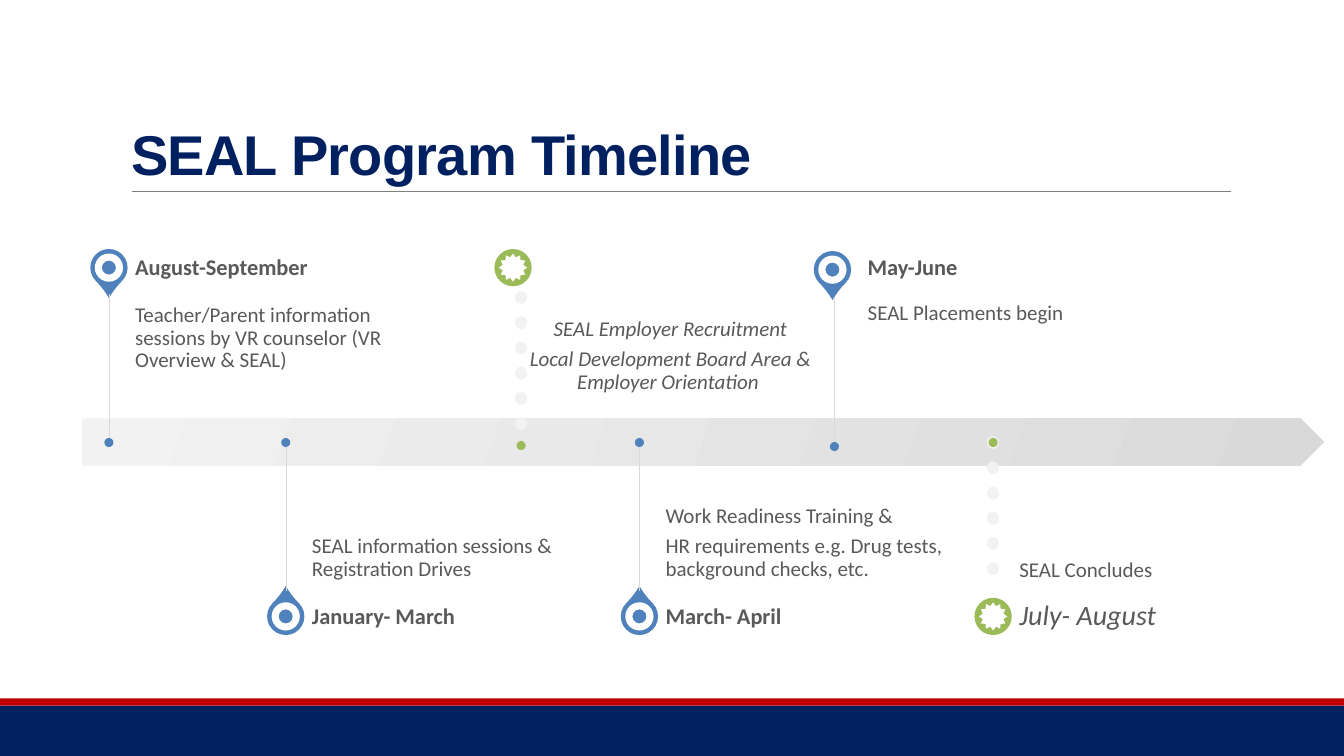
import pptx
import pptx.util
import pptx.dml.color
import pptx.enum.dml
import pptx.enum.shapes
import pptx.enum.text
from lxml import etree

Inches, Pt = pptx.util.Inches, pptx.util.Pt
SHAPE = pptx.enum.shapes.MSO_SHAPE
ALIGN = pptx.enum.text.PP_ALIGN
ANCHOR = pptx.enum.text.MSO_ANCHOR
STRAIGHT = pptx.enum.shapes.MSO_CONNECTOR.STRAIGHT

NAVY, RED, BLUE, GREEN = "002060", "C00000", "4F81BD", "9BBB59"
WHITE, PALE, GREY, TEXT = "FFFFFF", "F2F2F2", "D9D9D9", "595959"
W, H = 13.33, 7.5

prs = pptx.Presentation()
prs.slide_width, prs.slide_height = Inches(W), Inches(H)
s = prs.slides.add_slide(prs.slide_layouts[5])
rgb = pptx.dml.color.RGBColor.from_string


def add_shape(kind, x, y, w, h, color, rotation=0):
    sp = s.shapes.add_shape(kind, Inches(x), Inches(y), Inches(w), Inches(h))
    sp.shadow.inherit = False
    sp.fill.solid()
    sp.fill.fore_color.rgb = rgb(color)
    sp.line.fill.background()
    sp.rotation = rotation
    return sp


def add_line(x1, y1, x2, y2, color, width):
    line = s.shapes.add_connector(STRAIGHT, Inches(x1), Inches(y1), Inches(x2), Inches(y2))
    line.line.color.rgb = rgb(color)
    line.line.width = Pt(width)
    etree.SubElement(line._element.spPr, pptx.oxml.ns.qn("a:effectLst"))
    return line


# Footer bands, title and its rule
add_shape(SHAPE.RECTANGLE, 0, 7, W, 0.5, NAVY)
add_shape(SHAPE.RECTANGLE, 0, 6.93, W, 0.07, RED)
add_line(1.31, 1.9, 12.21, 1.9, "808080", 0.5)

title = s.shapes.title
title.left, title.top, title.width, title.height = Inches(1.2), Inches(0.31), Inches(11), Inches(1.59)
tf = title.text_frame
tf.vertical_anchor = ANCHOR.BOTTOM
p = tf.paragraphs[0]
p.alignment = ALIGN.LEFT
p.line_spacing = 0.85
r = p.add_run()
r.text = "SEAL Program Timeline"
r.font.name, r.font.size, r.font.bold = "Arial", Pt(40), True
r.font.color.rgb = rgb(NAVY)
r._r.get_or_add_rPr().set("spc", "-50")

# Timeline arrow
arrow = add_shape(SHAPE.PENTAGON, 0.81, 4.15, 12.32, 0.47, PALE)
arrow.fill.gradient()
arrow.fill.gradient_angle = 340
for stop, color, position in zip(arrow.fill.gradient_stops, (PALE, GREY), (0, 1)):
    stop.color.rgb = rgb(color)
    stop.position = position

# Events alternate above and below the arrow, one per column
FIRST, LAST = 1.08, 9.85
AXIS, STEM = 4.39, 1.47
PIN, HOLE, DOT = 0.37, 0.28, 0.09
BOX_W, DATE_H, TEXT_GAP = 2.92, 0.52, 0.26
NO_SHIFT = dict(pin=(0, 0), stem=(0, 0), text=(0, 0))

# date, date size, description, milestone, shifts from the column
events = [
    ("August-September", 16,
     ["Teacher/Parent information sessions by VR counselor (VR Overview & SEAL)"],
     False, NO_SHIFT),
    ("January- March", 16, ["SEAL information sessions & Registration Drives"], False, NO_SHIFT),
    (None, 16,
     ["SEAL Employer Recruitment", "Local Development Board Area & Employer Orientation "],
     True, dict(pin=(0.5, 0), stem=(0.58, 0.03), text=(0.39, 0.14))),
    ("March- April", 16,
     ["Work Readiness Training &", "HR requirements e.g. Drug tests, background checks, etc."],
     False, NO_SHIFT),
    ("May-June", 16, ["SEAL Placements begin"],
     False, dict(pin=(0.16, 0.02), stem=(0.18, 0.04), text=(0.25, 0))),
    ("July- August", 20, ["SEAL Concludes"], True, NO_SHIFT),
]
column = (LAST - FIRST) / (len(events) - 1)

for i, (date, date_size, description, milestone, shift) in enumerate(events):
    above = i % 2 == 0
    x = FIRST + i * column
    color = GREEN if milestone else BLUE

    # Pin
    pin_x = x + shift["pin"][0]
    pin_y = (2.655 if above else 6.115) + shift["pin"][1]
    pin = add_shape(SHAPE.OVAL if milestone else SHAPE.TEAR, pin_x - PIN / 2, pin_y - PIN / 2,
                    PIN, PIN, color, 135 if above else 315)
    if not milestone:
        pin.adjustments[0] = 1.15
    add_shape(SHAPE.STAR_12_POINT if milestone else SHAPE.DONUT,
              pin_x - HOLE / 2, pin_y - HOLE / 2, HOLE, HOLE, WHITE)

    # Description and date
    text_x = x + TEXT_GAP + shift["text"][0]
    body_y = (AXIS - STEM if above else AXIS) + shift["text"][1]
    body_anchor = ANCHOR.TOP if above else ANCHOR.BOTTOM
    body_insets = (0, 0.1, 0.1, 0.16) if above else (0, 0.16, 0, 0.1)
    centred = above and milestone
    boxes = [(description, body_y, STEM, body_anchor, body_insets, 15, False, centred)]
    if date:
        date_y = AXIS - STEM - DATE_H if above else AXIS + STEM
        boxes.append(([date], date_y, DATE_H, ANCHOR.MIDDLE, (0, 0, 0.11, 0),
                      date_size, not milestone, milestone))
    for lines, y, height, anchor, insets, size, bold, italic in boxes:
        tf = s.shapes.add_textbox(Inches(text_x), Inches(y), Inches(BOX_W), Inches(height)).text_frame
        tf.word_wrap = True
        tf.vertical_anchor = anchor
        tf.margin_left, tf.margin_top, tf.margin_right, tf.margin_bottom = map(Inches, insets)
        for n, text in enumerate(lines):
            p = tf.add_paragraph() if n else tf.paragraphs[0]
            p.alignment = ALIGN.CENTER if centred else ALIGN.LEFT
            p.line_spacing = 0.9
            p.space_after = Pt(0.35 * size)
            r = p.add_run()
            r.text = text
            r.font.name, r.font.size = "Calibri", Pt(size)
            r.font.bold, r.font.italic = bold, italic
            r.font.color.rgb = rgb(TEXT)

    # Stem and its dot on the arrow
    stem_x, axis_y = x + shift["stem"][0], AXIS + shift["stem"][1]
    start, end = (axis_y - STEM, axis_y) if above else (axis_y, axis_y + STEM)
    stem = add_line(stem_x, start, stem_x, end, PALE if milestone else GREY, 9 if milestone else 0.25)
    if milestone:
        stem.line.dash_style = pptx.enum.dml.MSO_LINE.ROUND_DOT
        stem.line._ln.set("cap", "rnd")
    add_shape(SHAPE.OVAL, stem_x - DOT / 2, axis_y - DOT / 2, DOT, DOT, color)

prs.save("out.pptx")
